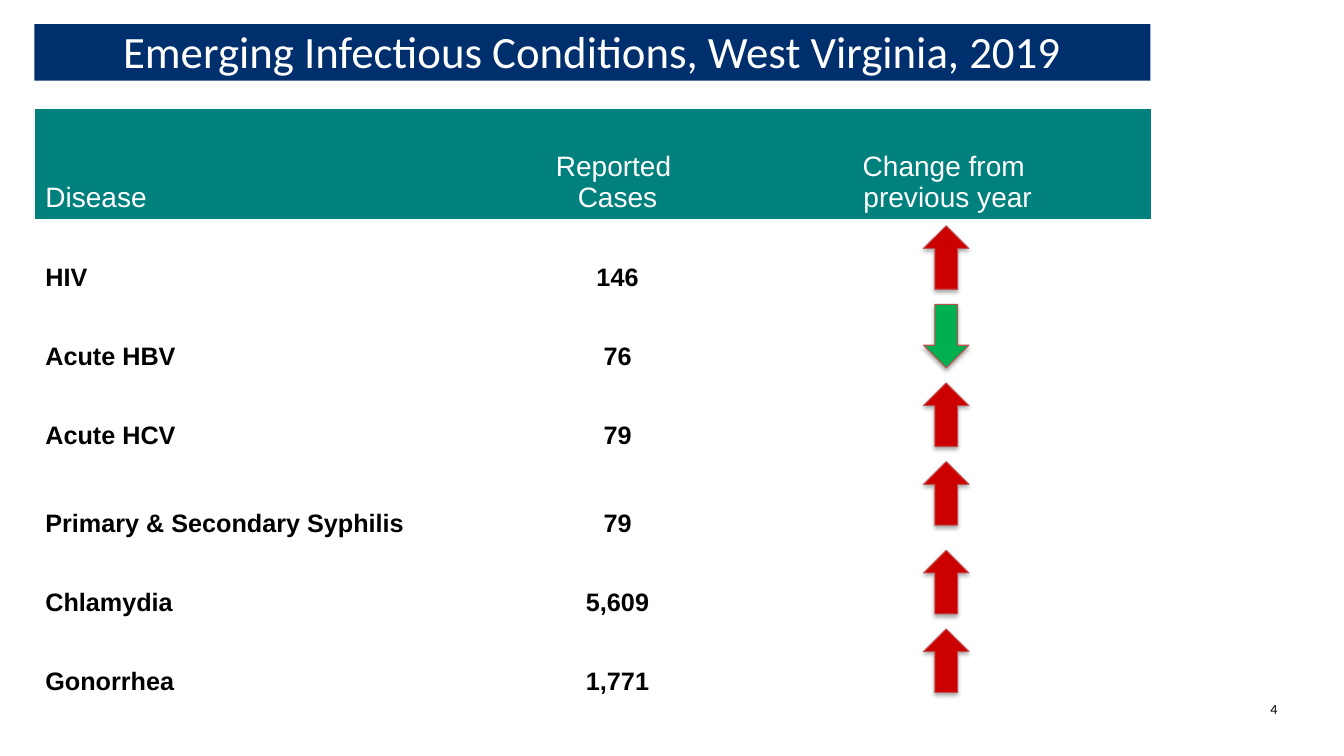
from lxml import etree
from pptx import Presentation
from pptx.dml.color import RGBColor
from pptx.enum.shapes import MSO_SHAPE
from pptx.enum.text import MSO_ANCHOR, PP_ALIGN
from pptx.oxml import parse_xml
from pptx.oxml.ns import qn
from pptx.util import Inches, Pt

RECTANGLE, UP_ARROW = MSO_SHAPE.RECTANGLE, MSO_SHAPE.UP_ARROW
LEFT, CENTER, RIGHT = PP_ALIGN.LEFT, PP_ALIGN.CENTER, PP_ALIGN.RIGHT
MIDDLE, BOTTOM = MSO_ANCHOR.MIDDLE, MSO_ANCHOR.BOTTOM

TITLE = "Emerging Infectious Conditions, West Virginia, 2019"
PAGE_NUMBER = "4"
HEADERS = ["Disease", "Reported \nCases", "Change from \nprevious year"]
DISEASES = [
    ("HIV", "146", "up"),
    ("Acute HBV", "76", "down"),
    ("Acute HCV", "79", "up"),
    ("Primary & Secondary Syphilis", "79", "up"),
    ("Chlamydia", "5,609", "up"),
    ("Gonorrhea", "1,771", "up"),
]

NAVY, TEAL, WHITE, BLACK = "002F6D", "00817E", "FFFFFF", "000000"
ARROW_STYLES = {"up": ("CC0000", 0), "down": ("00B050", 180)}
ARROW_LINE = "C0504D"
TABLE_LEFT, TABLE_TOP = 0.35, 1.08
COLUMN_WIDTHS = [4.52, 2.51, 4.04]
ROW_HEIGHTS = [1.09, 0.78, 0.78, 0.78, 0.88, 0.78, 0.78]
ARROW_LEFT, ARROW_WIDTH, ARROW_HEIGHT, ARROW_GAP = 9.16, 0.45, 0.63, 0.07
PLAIN_TABLE_STYLE = "{2D5ABB26-0587-4C30-8999-92F81FD0307C}"
DRAWING_NS = "http://schemas.openxmlformats.org/drawingml/2006/main"
SHADOW = f"""<a:effectLst xmlns:a="{DRAWING_NS}">
<a:outerShdw blurRad="40000" dist="23000" dir="5400000" rotWithShape="0">
<a:srgbClr val="000000"><a:alpha val="35000"/></a:srgbClr>
</a:outerShdw></a:effectLst>"""


def color(value):
    return RGBColor.from_string(value)


def write(frame, text, size, ink, align, font="Arial", bold=False):
    frame.text = text
    for para in frame.paragraphs:
        para.alignment = align
        para.font.name = font
        para.font.size = Pt(size)
        para.font.bold = bold
        para.font.color.rgb = color(ink)


def clear_margins(frame):
    frame.margin_left = frame.margin_top = frame.margin_right = frame.margin_bottom = 0
    frame.word_wrap = True


def add_title(page):
    title = page.shapes.title
    title.left, title.top = Inches(0.34), Inches(0.25)
    title.width, title.height = Inches(11.07), Inches(0.5)
    clear_margins(title.text_frame)
    title.text_frame.vertical_anchor = MIDDLE
    write(title.text_frame, TITLE, 32, WHITE, CENTER, "Calibri")

    bar = page.shapes.add_shape(
        RECTANGLE, Inches(0.34), Inches(0.24), Inches(11.07), Inches(0.56))
    bar.shadow.inherit = False
    bar.fill.solid()
    bar.fill.fore_color.rgb = color(NAVY)
    bar.line.fill.background()
    title._element.addprevious(bar._element)  # the bar lies behind the title


def add_disease_table(page):
    table = page.shapes.add_table(
        len(ROW_HEIGHTS), len(COLUMN_WIDTHS), Inches(TABLE_LEFT), Inches(TABLE_TOP),
        Inches(sum(COLUMN_WIDTHS)), Inches(sum(ROW_HEIGHTS))).table
    properties = table._tbl.tblPr
    style = properties.find(qn("a:tableStyleId"))
    if style is None:
        style = etree.SubElement(properties, qn("a:tableStyleId"))
    style.text = PLAIN_TABLE_STYLE
    table.horz_banding = False

    for column, width in zip(table.columns, COLUMN_WIDTHS):
        column.width = Inches(width)
    for row, height in zip(table.rows, ROW_HEIGHTS):
        row.height = Inches(height)

    rows = [HEADERS] + [(name, cases, "") for name, cases, _ in DISEASES]
    for r, texts in enumerate(rows):
        for c, text in enumerate(texts):
            cell = table.cell(r, c)
            cell.vertical_anchor = BOTTOM
            align = LEFT if c == 0 else CENTER
            if r == 0:
                cell.fill.solid()
                cell.fill.fore_color.rgb = color(TEAL)
                write(cell.text_frame, text, 20, WHITE, align)
            else:
                cell.fill.background()
                write(cell.text_frame, text, 18, BLACK, align, bold=True)


def add_arrows(page):
    for index, (_, _, change) in enumerate(DISEASES):
        fill, rotation = ARROW_STYLES[change]
        top = TABLE_TOP + sum(ROW_HEIGHTS[:index + 1]) + ARROW_GAP
        arrow = page.shapes.add_shape(
            UP_ARROW, Inches(ARROW_LEFT), Inches(top),
            Inches(ARROW_WIDTH), Inches(ARROW_HEIGHT))
        arrow.rotation = rotation
        arrow.fill.solid()
        arrow.fill.fore_color.rgb = color(fill)
        arrow.line.color.rgb = color(ARROW_LINE)
        arrow.line.width = Pt(0.75)
        arrow._element.spPr.append(parse_xml(SHADOW))


def add_page_number(page):
    box = page.shapes.add_textbox(
        Inches(12.16), Inches(6.95), Inches(0.51), Inches(0.19))
    clear_margins(box.text_frame)
    write(box.text_frame, PAGE_NUMBER, 10, BLACK, RIGHT, "Calibri")


def main():
    deck = Presentation()
    deck.slide_width, deck.slide_height = Inches(13.33), Inches(7.5)
    page = deck.slides.add_slide(deck.slide_layouts[5])
    add_title(page)
    add_page_number(page)
    add_disease_table(page)
    add_arrows(page)
    deck.save("out.pptx")


if __name__ == "__main__":
    main()
